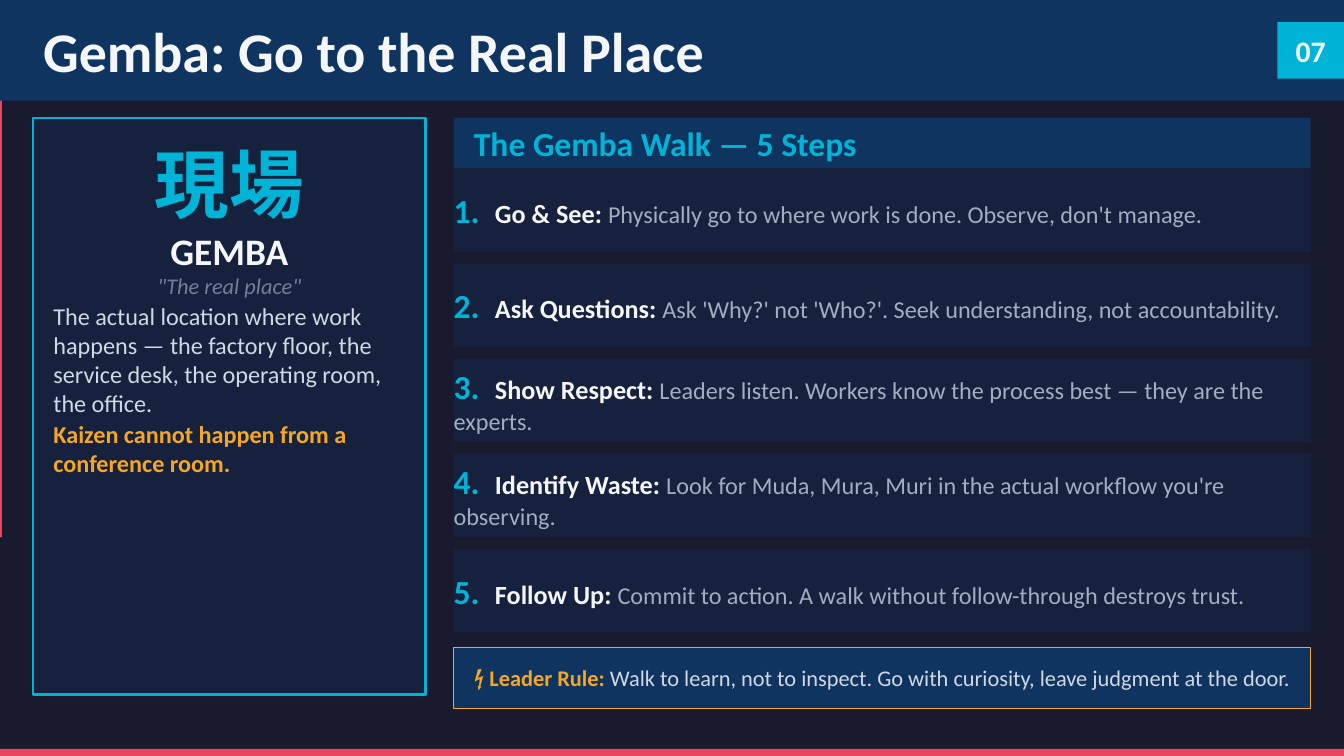
from lxml import etree
from pptx import Presentation
from pptx.dml.color import RGBColor
from pptx.enum import shapes, text
from pptx.oxml import ns
from pptx.util import Inches, Pt

NIGHT = RGBColor(0x1A, 0x1A, 0x2E)
NAVY = RGBColor(0x16, 0x21, 0x3E)
BLUE = RGBColor(0x0F, 0x34, 0x60)
CYAN = RGBColor(0x00, 0xB4, 0xD8)
RED = RGBColor(0xE9, 0x45, 0x60)
AMBER = RGBColor(0xF5, 0xA6, 0x23)
WHITE = RGBColor(0xF4, 0xF6, 0xF8)
PALE = RGBColor(0xD0, 0xD8, 0xE4)
SILVER = RGBColor(0xA0, 0xAE, 0xC0)
SLATE = RGBColor(0x71, 0x80, 0x96)

FONT = "Calibri"
LEFT, CENTER = text.PP_ALIGN.LEFT, text.PP_ALIGN.CENTER
TOP, MIDDLE = text.MSO_ANCHOR.TOP, text.MSO_ANCHOR.MIDDLE

# Run formats: size, colour, bold, italic
FORMATS = {
    "title": dict(size=Pt(40), color=WHITE, bold=True),
    "page": dict(size=Pt(21.3), color=WHITE, bold=True),
    "kanji": dict(size=Pt(53.3), color=CYAN, bold=True),
    "term": dict(size=Pt(26.7), color=WHITE, bold=True),
    "meaning": dict(size=Pt(16), color=SLATE, italic=True),
    "body": dict(size=Pt(17.3), color=PALE),
    "warning": dict(size=Pt(17.3), color=AMBER, bold=True),
    "heading": dict(size=Pt(24), color=CYAN, bold=True),
    "step": dict(size=Pt(18.7), color=WHITE, bold=True),
    "detail": dict(size=Pt(17.3), color=SILVER),
    "rule": dict(size=Pt(16), color=AMBER, bold=True),
    "rule text": dict(size=Pt(16), color=PALE),
}

TITLE = "Gemba: Go to the Real Place"
PAGE = "07"
# Format, wording, alignment, points of space before
DEFINITION = [
    ("kanji", "現場", CENTER, 0),
    ("term", "GEMBA", CENTER, 0),
    ("meaning", '"The real place"', CENTER, 0),
    ("body", "The actual location where work happens — the factory floor, "
             "the service desk, the operating room, the office.", LEFT, 1.2),
    ("warning", "Kaizen cannot happen from a conference room.", LEFT, 1.2),
]
STEPS_HEADING = "The Gemba Walk — 5 Steps"
STEPS = [
    ("Go & See: ", "Physically go to where work is done. Observe, don't manage."),
    ("Ask Questions: ", "Ask 'Why?' not 'Who?'. Seek understanding, not accountability."),
    ("Show Respect: ", "Leaders listen. Workers know the process best — they are the experts."),
    ("Identify Waste: ", "Look for Muda, Mura, Muri in the actual workflow you're observing."),
    ("Follow Up: ", "Commit to action. A walk without follow-through destroys trust."),
]
LEADER_RULE = ("⚡ Leader Rule: ",
               "Walk to learn, not to inspect. Go with curiosity, leave judgment at the door.")

SLIDE_W, SLIDE_H = 13.33, 7.5
HEADER_H = 1
CONTENT_TOP = 1.17
STEPS_LEFT, STEPS_W = 4.5, 8.5
HEADING_H = 0.5
STEP_H, STEP_PITCH = 0.83, 0.9435
NUMBER_W = 0.41

deck = Presentation()
deck.slide_width, deck.slide_height = Inches(SLIDE_W), Inches(SLIDE_H)
slide = deck.slides.add_slide(deck.slide_layouts[6])
slide.background.fill.solid()
slide.background.fill.fore_color.rgb = NIGHT


def add_box(left, top, width, height, fill, line=None, line_width=0):
    box = slide.shapes.add_shape(shapes.MSO_SHAPE.RECTANGLE, Inches(left),
                                 Inches(top), Inches(width), Inches(height))
    box.shadow.inherit = False
    box.fill.solid()
    box.fill.fore_color.rgb = fill
    if line is None:
        box.line.fill.background()
    else:
        box.line.color.rgb = line
        box.line.width = Pt(line_width)
    return box


def set_up_frame(shape, anchor=MIDDLE, insets=(0.1, 0.05, 0.1, 0.05)):
    """Prepare the text frame; insets run left, top, right, bottom."""
    frame = shape.text_frame
    frame.word_wrap = True
    frame.vertical_anchor = anchor
    for side, inset in zip(("left", "top", "right", "bottom"), insets):
        setattr(frame, f"margin_{side}", Inches(inset))
    return frame


def write(paragraph, *pieces, align=LEFT):
    """Add (format name, wording) pieces as runs."""
    paragraph.alignment = align
    for name, wording in pieces:
        run = paragraph.add_run()
        run.text = wording
        run.font.name = FONT
        for key, value in FORMATS[name].items():
            if key == "color":
                run.font.color.rgb = value
            else:
                setattr(run.font, key, value)


def add_tab_stop(paragraph, position):
    stops = etree.SubElement(paragraph._p.get_or_add_pPr(), ns.qn("a:tabLst"))
    etree.SubElement(stops, ns.qn("a:tab"), pos=str(Inches(position)), algn="l")


# Edge bars and header
add_box(0, SLIDE_H - 0.07, SLIDE_W, 0.07, RED)
add_box(0, 0, 0.02, 5.33, RED)
add_box(0, 0, SLIDE_W, HEADER_H, BLUE)
title = slide.shapes.add_textbox(Inches(0.33), Inches(0.11), Inches(11.11), Inches(0.78))
write(set_up_frame(title).paragraphs[0], ("title", TITLE))
badge = add_box(12.67, 0.22, SLIDE_W - 12.67, 0.56, CYAN)
write(set_up_frame(badge).paragraphs[0], ("page", PAGE), align=CENTER)

# Definition panel
panel = add_box(0.33, CONTENT_TOP, 3.89, 5.72, NAVY, CYAN, 1.5)
definition = set_up_frame(panel, TOP, (0.2, 0.2, 0.2, 0.05))
for index, (name, wording, align, gap) in enumerate(DEFINITION):
    paragraph = definition.add_paragraph() if index else definition.paragraphs[0]
    write(paragraph, (name, wording), align=align)
    if gap:
        paragraph.space_before = Pt(gap)

# Five steps
heading = add_box(STEPS_LEFT, CONTENT_TOP, STEPS_W, HEADING_H, BLUE)
write(set_up_frame(heading, insets=(0.2, 0.05, 0.1, 0.05)).paragraphs[0],
      ("heading", STEPS_HEADING))
for index, (step, detail) in enumerate(STEPS):
    card = add_box(STEPS_LEFT, CONTENT_TOP + HEADING_H + index * STEP_PITCH,
                   STEPS_W, STEP_H, NAVY)
    paragraph = set_up_frame(card, insets=(0, 0.05, 0.2, 0.05)).paragraphs[0]
    add_tab_stop(paragraph, NUMBER_W)
    write(paragraph, ("heading", f"{index + 1}.\t"), ("step", step), ("detail", detail))

# Leader rule
rule = add_box(STEPS_LEFT, 6.42, STEPS_W, 0.61, BLUE, AMBER, 0.75)
write(set_up_frame(rule, insets=(0.2, 0.05, 0.1, 0.05)).paragraphs[0],
      *zip(("rule", "rule text"), LEADER_RULE))

deck.save("out.pptx")
